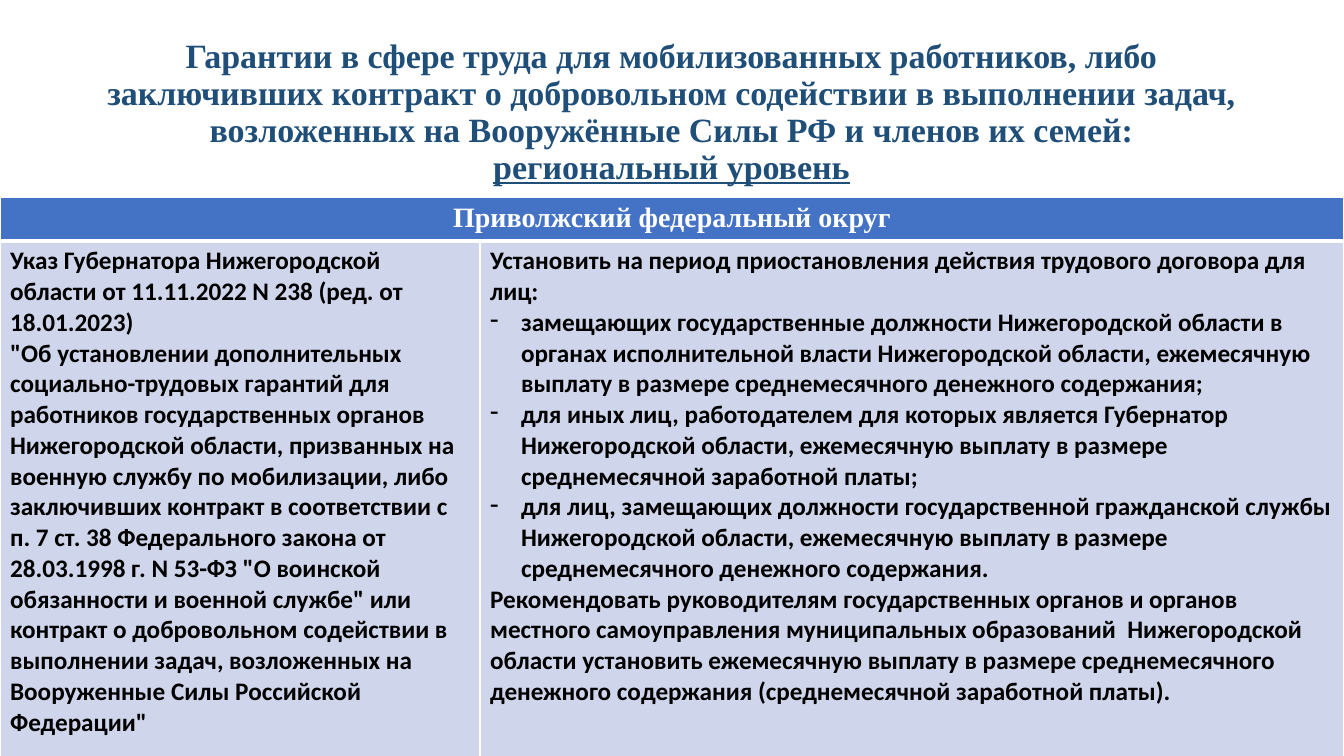
from dataclasses import dataclass

from lxml import etree
from pptx import Presentation
from pptx.dml.color import RGBColor
from pptx.enum.text import MSO_ANCHOR, PP_ALIGN
from pptx.oxml.ns import qn
from pptx.util import Emu, Pt

CENTER, LEFT = PP_ALIGN.CENTER, PP_ALIGN.LEFT
MIDDLE = MSO_ANCHOR.MIDDLE
EMU_PER_PX = 914400 / 100.8
SLIDE_SIZE = (1344, 756)
COLUMN_WIDTHS = (480, 864)
ROW_HEIGHTS = (43, 526)
TABLE_TOP = 197
HANGING_INDENT = 31


@dataclass(frozen=True)
class Style:
    """Look of a run of text."""
    font: str
    size: float
    color: str


@dataclass(frozen=True)
class Para:
    """One paragraph of a table cell."""
    text: str
    dashed: bool = False


@dataclass(frozen=True)
class CellSpec:
    """Place, look and wording of a table cell."""
    row: int
    column: int
    fill: str
    style: Style
    align: PP_ALIGN
    bottom_border: float
    paras: tuple[Para, ...]


TITLE_STYLE = Style("Times New Roman", 24.3, "1F4E79")
DISTRICT_STYLE = Style("Times New Roman", 20, "FFFFFF")
BODY_STYLE = Style("Calibri", 18, "000000")

TITLE = (
    "Гарантии в сфере труда для мобилизованных работников, либо заключивших "
    "контракт о добровольном содействии в выполнении задач, возложенных на "
    "Вооружённые Силы РФ и членов их семей: "
)
LEVEL = "региональный уровень"

DECREE = (
    Para("Указ Губернатора Нижегородской области от 11.11.2022 N 238 "
         "(ред. от 18.01.2023)"),
    Para('"Об установлении дополнительных социально-трудовых гарантий для '
         "работников государственных органов Нижегородской области, призванных "
         "на военную службу по мобилизации, либо заключивших контракт в "
         "соответствии с п. 7 ст. 38 Федерального закона от 28.03.1998 г. "
         'N 53-ФЗ "О воинской обязанности и военной службе" или контракт о '
         "добровольном содействии в выполнении задач, возложенных на "
         'Вооруженные Силы Российской Федерации"'),
)
MEASURES = (
    Para("Установить на период приостановления действия трудового договора "
         "для лиц:"),
    Para("замещающих государственные должности Нижегородской области в органах "
         "исполнительной власти Нижегородской области, ежемесячную выплату в "
         "размере среднемесячного денежного содержания;", True),
    Para("для иных лиц, работодателем для которых является Губернатор "
         "Нижегородской области, ежемесячную выплату в размере среднемесячной "
         "заработной платы;", True),
    Para("для лиц, замещающих должности государственной гражданской службы "
         "Нижегородской области, ежемесячную выплату в размере среднемесячного "
         "денежного содержания.", True),
    Para("Рекомендовать руководителям государственных органов и органов "
         "местного самоуправления муниципальных образований  Нижегородской "
         "области установить ежемесячную выплату в размере среднемесячного "
         "денежного содержания (среднемесячной заработной платы)."),
)
CELLS = (
    CellSpec(0, 0, "4472C4", DISTRICT_STYLE, CENTER, 3,
             (Para("Приволжский федеральный округ"),)),
    CellSpec(1, 0, "CFD5EA", BODY_STYLE, LEFT, 1, DECREE),
    CellSpec(1, 1, "CFD5EA", BODY_STYLE, LEFT, 1, MEASURES),
)


def px(length: int) -> Emu:
    """Turn slide pixels into EMU."""
    return Emu(round(length * EMU_PER_PX))


def rgb(color: str) -> RGBColor:
    """Turn a hex string into a colour."""
    return RGBColor.from_string(color)


def add_run(paragraph, text: str, style: Style, underline: bool = False) -> None:
    """Append a bold run to a paragraph."""
    run = paragraph.add_run()
    run.text = text
    run.font.name = style.font
    run.font.size = Pt(style.size)
    run.font.bold = True
    run.font.underline = underline
    run.font.color.rgb = rgb(style.color)


def add_dash(paragraph) -> None:
    """Give a paragraph a hanging dash."""
    properties = paragraph._p.get_or_add_pPr()
    properties.set("marL", str(px(HANGING_INDENT)))
    properties.set("indent", str(-px(HANGING_INDENT)))
    etree.SubElement(properties, qn("a:buFontTx"))
    etree.SubElement(properties, qn("a:buChar"), char="-")


def set_borders(cell, bottom: float) -> None:
    """Draw white borders around a cell."""
    properties = cell._tc.get_or_add_tcPr()
    widths = {"a:lnL": 1, "a:lnR": 1, "a:lnT": 1, "a:lnB": bottom}
    for position, (side, width) in enumerate(widths.items()):
        border = etree.Element(qn(side), w=str(Pt(width)))
        fill = etree.SubElement(border, qn("a:solidFill"))
        etree.SubElement(fill, qn("a:srgbClr"), val="FFFFFF")
        properties.insert(position, border)


def add_title(slide) -> None:
    """Add the slide heading."""
    heading = slide.shapes.add_textbox(px(92), px(40), px(1159), px(146))
    frame = heading.text_frame
    frame.word_wrap = True
    frame.vertical_anchor = MIDDLE
    paragraph = frame.paragraphs[0]
    paragraph.alignment = CENTER
    paragraph.line_spacing = 0.9
    add_run(paragraph, TITLE, TITLE_STYLE)
    add_run(paragraph, LEVEL, TITLE_STYLE, underline=True)


def fill_cell(cell, spec: CellSpec) -> None:
    """Colour a cell and write its paragraphs."""
    cell.fill.solid()
    cell.fill.fore_color.rgb = rgb(spec.fill)
    set_borders(cell, spec.bottom_border)
    frame = cell.text_frame
    for index, para in enumerate(spec.paras):
        paragraph = frame.add_paragraph() if index else frame.paragraphs[0]
        paragraph.alignment = spec.align
        if para.dashed:
            add_dash(paragraph)
        add_run(paragraph, para.text, spec.style)


def add_guarantees(slide) -> None:
    """Add the table of regional guarantees."""
    guarantees = slide.shapes.add_table(
        len(ROW_HEIGHTS), len(COLUMN_WIDTHS), px(0), px(TABLE_TOP),
        px(sum(COLUMN_WIDTHS)), px(sum(ROW_HEIGHTS))).table
    guarantees.horz_banding = False
    for column, width in zip(guarantees.columns, COLUMN_WIDTHS):
        column.width = px(width)
    for row, height in zip(guarantees.rows, ROW_HEIGHTS):
        row.height = px(height)
    guarantees.cell(0, 0).merge(guarantees.cell(0, 1))
    for spec in CELLS:
        fill_cell(guarantees.cell(spec.row, spec.column), spec)


def main() -> None:
    """Build and save the slide."""
    deck = Presentation()
    deck.slide_width, deck.slide_height = map(px, SLIDE_SIZE)
    slide = deck.slides.add_slide(deck.slide_layouts[6])
    add_title(slide)
    add_guarantees(slide)
    deck.save("out.pptx")


if __name__ == "__main__":
    main()
